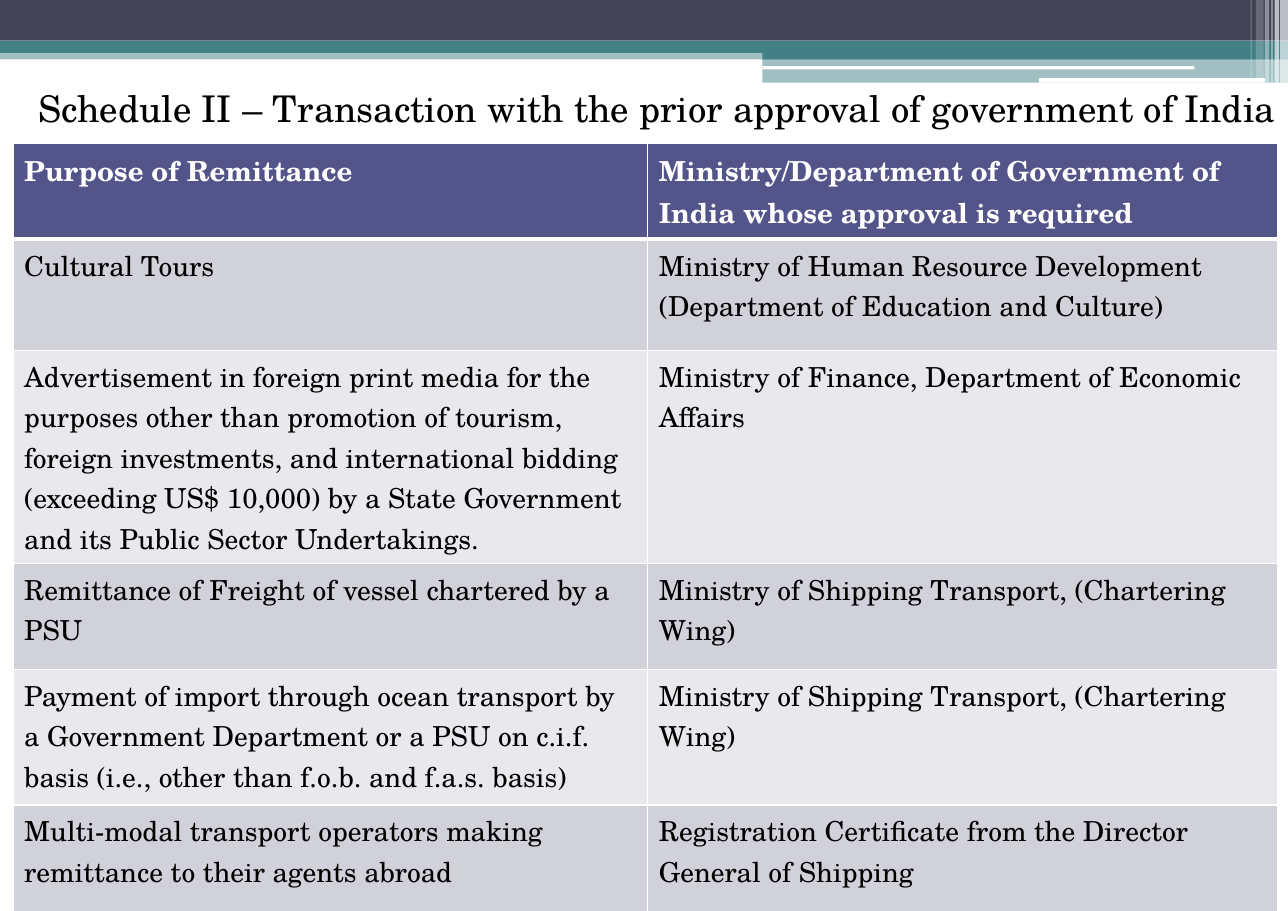
import lxml.etree
import pptx
import pptx.dml.color
import pptx.enum.shapes
import pptx.enum.text
import pptx.oxml
import pptx.oxml.ns
import pptx.util

Inches = pptx.util.Inches
Pt = pptx.util.Pt
SHAPE = pptx.enum.shapes.MSO_SHAPE
FONT = "TeX Gyre Schola"
TEAL, NAVY, WHITE, BLACK = "438086", "424456", "FFFFFF", "000000"
HEADER, BANDS = "53548A", ("D1D1DA", "E9E9ED")

TITLE = "Schedule II – Transaction with the prior approval of government of India"
COLUMN_WIDTHS = (5.76, 5.72)
ROW_HEIGHTS = (0.74, 1.01, 1.85, 0.96, 1.23, 1.05)
ROWS = (
    ("Purpose of Remittance",
     "Ministry/Department of Government of India whose approval is required"),
    ("Cultural Tours",
     "Ministry of Human Resource Development (Department of Education and Culture)"),
    ("Advertisement in foreign print media for the purposes other than promotion of "
     "tourism, foreign investments, and international bidding (exceeding US$ 10,000) "
     "by a State Government and its Public Sector Undertakings.",
     "Ministry of Finance, Department of Economic Affairs"),
    ("Remittance of Freight of vessel chartered by a PSU",
     "Ministry of Shipping Transport, (Chartering Wing)"),
    ("Payment of import through ocean transport by a Government Department or a PSU "
     "on c.i.f. basis (i.e., other than f.o.b. and f.a.s. basis)",
     "Ministry of Shipping Transport, (Chartering Wing)"),
    ("Multi-modal transport operators making remittance to their agents abroad",
     "Registration Certificate from the Director General of Shipping"),
)

BANNER_BARS = (
    (0, 0.44, 11.69, 0.1, TEAL, 50),
    (0, 0, 11.69, 0.37, NAVY, 100),
    (0, 0.37, 11.69, 0.11, TEAL, 100),
    (6.92, 0.43, 4.77, 0.11, TEAL, 100),
    (6.92, 0.53, 4.77, 0.22, TEAL, 50),
)
BANNER_SLITS = ((6.92, 0.6, 3.92, 0.03), (9.43, 0.71, 2.05, 0.04))
CORNER_STRIPES = (
    (11.62, 0.07, 0.75, 65),
    (11.57, 0.04, 0.75, 65),
    (11.54, 0.01, 0.75, 60),
    (11.48, 0.04, 0.75, 40),
    (11.4, 0.07, 0.71, 20),
    (11.35, 0.01, 0.71, 30),
)


def rgb(value):
    """Return the colour for a hex string."""
    return pptx.dml.color.RGBColor.from_string(value)


def set_font(p, size, color, bold=False):
    """Format all the text of a paragraph."""
    p.font.name = FONT
    p.font.size = Pt(size)
    p.font.bold = bold
    p.font.color.rgb = rgb(color)


def add_bar(slide, x, y, w, h, color, opacity=100, kind=SHAPE.RECTANGLE):
    """Add a borderless bar with an opacity in percent."""
    sp = slide.shapes.add_shape(kind, Inches(x), Inches(y), Inches(w), Inches(h))
    sp.shadow.inherit = False
    sp.line.fill.background()
    sp.fill.solid()
    sp.fill.fore_color.rgb = rgb(color)
    if opacity < 100:
        clr = sp.fill._xPr.find(".//" + pptx.oxml.ns.qn("a:srgbClr"))
        alpha = lxml.etree.SubElement(clr, pptx.oxml.ns.qn("a:alpha"))
        alpha.set("val", str(opacity * 1000))


def add_banner(slide):
    """Draw the bars, slits and corner stripes along the top."""
    for bar in BANNER_BARS:
        add_bar(slide, *bar)
    for slit in BANNER_SLITS:
        add_bar(slide, *slit, WHITE, kind=SHAPE.ROUNDED_RECTANGLE)
    for x, w, h, opacity in CORNER_STRIPES:
        add_bar(slide, x, 0, w, h, WHITE, opacity)


def set_title(slide, text):
    """Place and format the slide title."""
    sp = slide.shapes.title
    sp.left, sp.top, sp.width, sp.height = map(Inches, (0.1, 0.72, 11.59, 0.57))
    tf = sp.text_frame
    tf.text = text
    tf.word_wrap = True
    tf.auto_size = pptx.enum.text.MSO_AUTO_SIZE.NONE
    tf.vertical_anchor = pptx.enum.text.MSO_ANCHOR.TOP
    tf.margin_left, tf.margin_right = Inches(0.25), 0
    tf.margin_top = tf.margin_bottom = Inches(0.06)
    p = tf.paragraphs[0]
    p.alignment = pptx.enum.text.PP_ALIGN.LEFT
    p.space_before = Pt(3.4)
    set_font(p, 24, BLACK)


def set_borders(cell, **widths):
    """Give a cell white borders, 1 pt wide unless a side is named."""
    tcPr = cell._tc.get_or_add_tcPr()
    for side in "LRTB":
        tcPr.append(pptx.oxml.parse_xml(
            f'<a:ln{side} {pptx.oxml.ns.nsdecls("a")} w="{Pt(widths.get(side, 1))}">'
            f'<a:solidFill><a:srgbClr val="{WHITE}"/></a:solidFill></a:ln{side}>'))


def add_approval_table(slide):
    """Add the table of purposes and approving ministries."""
    table = slide.shapes.add_table(
        len(ROWS), len(COLUMN_WIDTHS), Inches(0.12), Inches(1.3),
        Inches(sum(COLUMN_WIDTHS)), Inches(sum(ROW_HEIGHTS))).table
    for column, width in zip(table.columns, COLUMN_WIDTHS):
        column.width = Inches(width)
    for i, (row, height, texts) in enumerate(zip(table.rows, ROW_HEIGHTS, ROWS)):
        row.height = Inches(height)
        is_header = i == 0
        for cell, text in zip(row.cells, texts):
            cell.text = text
            set_font(cell.text_frame.paragraphs[0], 18,
                     WHITE if is_header else BLACK, is_header)
            set_borders(cell, B=3 if is_header else 1, T=3 if i == 1 else 1)
            cell.fill.solid()
            cell.fill.fore_color.rgb = rgb(HEADER if is_header else BANDS[(i - 1) % 2])


def main():
    """Build and save the slide."""
    prs = pptx.Presentation()
    prs.slide_width, prs.slide_height = Inches(11.69), Inches(8.27)
    slide = prs.slides.add_slide(prs.slide_layouts[5])
    add_banner(slide)
    set_title(slide, TITLE)
    add_approval_table(slide)
    prs.save("out.pptx")


if __name__ == "__main__":
    main()
